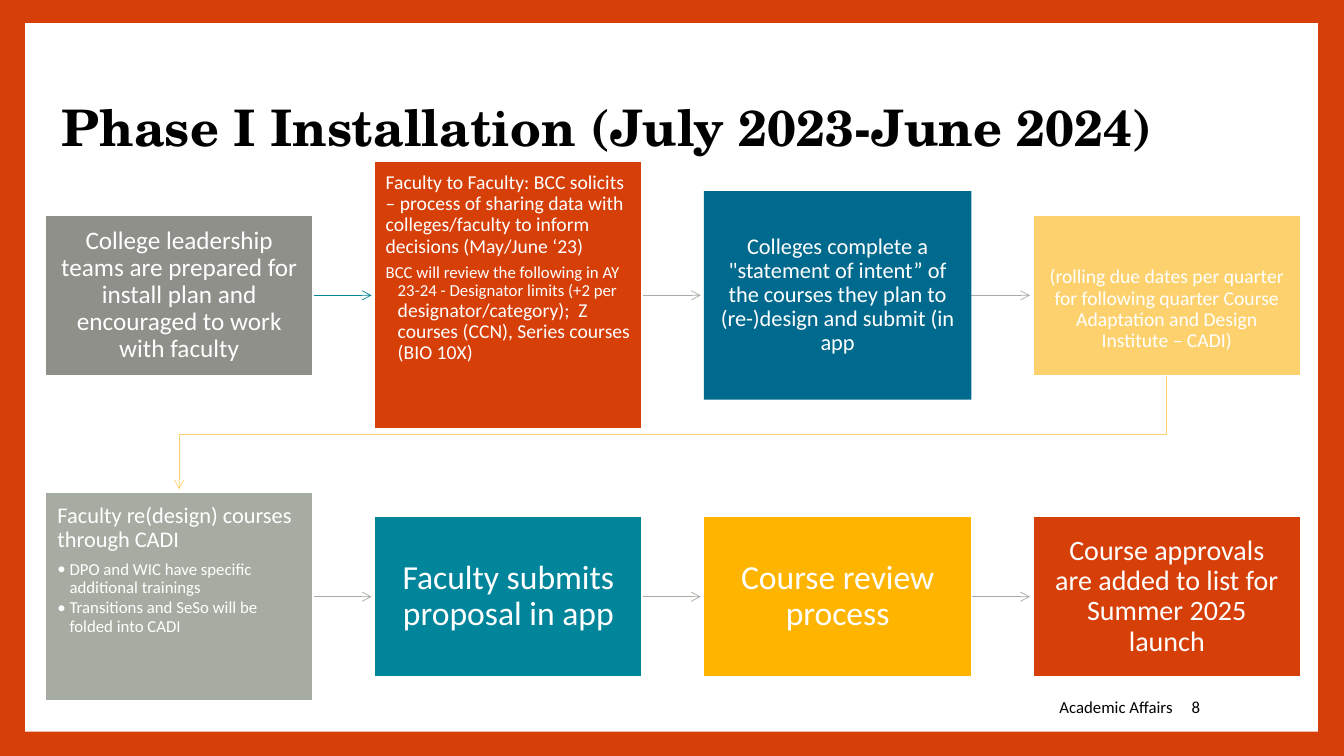
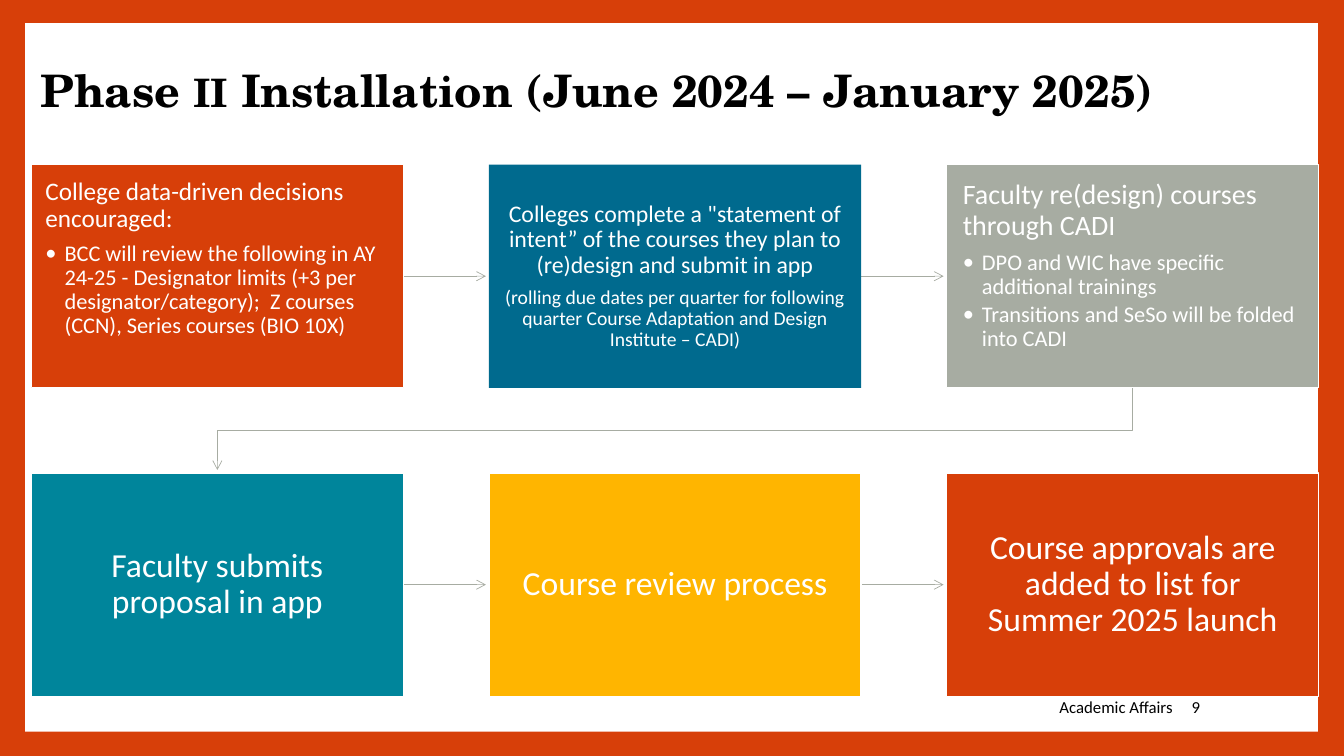
from lxml.etree import SubElement
from pptx import Presentation
from pptx.dml.color import RGBColor
from pptx.enum.shapes import MSO_CONNECTOR, MSO_SHAPE
from pptx.enum.text import MSO_ANCHOR, PP_ALIGN
from pptx.oxml.ns import qn
from pptx.util import Inches, Pt

WIDE, HIGH = 13.33, 7.5
GAP = 0.23
LOW = 0.6
MID = 0.78
TIP = 0.03

ORANGE = RGBColor(0xD7, 0x3F, 0x09)
WHITE = RGBColor(0xFF, 0xFF, 0xFF)
BLACK = RGBColor(0x00, 0x00, 0x00)
STONE = RGBColor(0x8E, 0x90, 0x89)
BLUE = RGBColor(0x00, 0x6A, 0x8E)
SAND = RGBColor(0xFD, 0xD2, 0x6E)
SAGE = RGBColor(0xA7, 0xAC, 0xA2)
TEAL = RGBColor(0x00, 0x85, 0x9B)
GOLD = RGBColor(0xFF, 0xB5, 0x00)

HEAD = {"name": "TeX Gyre Schola", "bold": True}
BODY = {"name": "Calibri", "bold": False}
ALIGN = {"center": PP_ALIGN.CENTER, "right": PP_ALIGN.RIGHT}
SIDES = ("margin_left", "margin_top", "margin_right", "margin_bottom")

DUE = ("(rolling due dates per quarter for following quarter "
       "Course Adaptation and Design Institute – CADI)")
REMAKE = "Faculty re(design) courses through CADI"
TRAIN = "DPO and WIC have specific additional trainings"
FOLD = "Transitions and SeSo will be folded into CADI"
SUBMIT = "Faculty submits proposal in app"
REVIEW = "Course review process"
LAUNCH = "Course approvals are added to list for Summer 2025 launch"

DECKS = [
    {
        "title": [("Phase I Installation (July 2023-June 2024)", 36)],
        "spot": (0.51, 0.57, 12.16, 1.45),
        "page": "8", "left": 0.45, "right": 12.9, "mids": (2.93, 5.92),
        "hang": 0.12, "lines": {0: TEAL, 3: SAND},
        "boxes": [
            (STONE, LOW, 0.14, 0, [("center", [
                ("College leadership teams are prepared for install plan "
                 "and encouraged to work with faculty", 18)])]),
            (ORANGE, 1, 0.11, 0, [
                ("left", [("Faculty to Faculty: BCC solicits – process of sharing data "
                           "with colleges/faculty to inform decisions (May/June ‘23)", 14)]),
                ("hang", [("BCC will review the following in AY 23-24 - "
                           "Designator limits (+2 per ", 12),
                          ("designator/category);  Z courses (CCN), "
                           "Series courses (BIO 10X)", 14)])]),
            (BLUE, MID, 0.12, 0, [("center", [
                ("Colleges complete a \"statement of intent” of the courses "
                 "they plan to (re-)design and submit (in app", 16)])]),
            (SAND, LOW, 0.11, 0.28, [("center", [(DUE, 14)])]),
            (SAGE, MID, 0.12, 0, [("left", [(REMAKE, 16)]),
                                  ("bullet", [(TRAIN, 12)]),
                                  ("bullet", [(FOLD, 12)])]),
            (TEAL, LOW, 0.19, 0, [("center", [(SUBMIT, 24)])]),
            (GOLD, LOW, 0.19, 0, [("center", [(REVIEW, 24)])]),
            (ORANGE, LOW, 0.16, 0, [("center", [(LAUNCH, 20)])]),
        ],
    },
    {
        "title": [("Phase ", 32), ("II", 28),
                  (" Installation (June 2024 – January 2025)", 32)],
        "spot": (0.3, 0.18, 12.16, 1.49),
        "page": "9", "left": 0.31, "right": 13.08, "mids": (2.74, 5.8),
        "hang": 0.19, "lines": {},
        "boxes": [
            (ORANGE, LOW, 0.14, 0, [
                ("left", [("College data-driven decisions encouraged:", 18)]),
                ("bullet", [("BCC will review the following in AY 24-25 - "
                             "Designator limits (+3 per designator/category);  "
                             "Z courses (CCN), Series courses (BIO 10X)", 16)])]),
            (BLUE, LOW, 0.13, 0, [
                ("center", [("Colleges complete a \"statement of intent” of the courses "
                             "they plan to (re)design and submit in app", 17)]),
                ("center", [(DUE, 14)])]),
            (SAGE, LOW, 0.16, 0, [("left", [(REMAKE, 20)]),
                                  ("bullet", [(TRAIN, 16)]),
                                  ("bullet", [(FOLD, 16)])]),
            (TEAL, LOW, 0.19, 0, [("center", [(SUBMIT, 24)])]),
            (GOLD, LOW, 0.19, 0, [("center", [(REVIEW, 24)])]),
            (ORANGE, LOW, 0.19, 0, [("center", [(LAUNCH, 24)])]),
        ],
    },
]


def put(item, look):
    for name, value in look.items():
        setattr(item, name, value)


def write(frame, paras, face, color, hang=0, space=0.9):
    frame.word_wrap = True
    for i, (kind, runs) in enumerate(paras):
        para = frame.paragraphs[0] if i == 0 else frame.add_paragraph()
        inner = kind in ("hang", "bullet")
        share = 0.15 if inner else 0.35
        put(para, {"alignment": ALIGN.get(kind, PP_ALIGN.LEFT),
                   "line_spacing": space,
                   "space_after": Pt(runs[0][1] * share) if face is BODY else Pt(0)})
        for text, size in runs:
            run = para.add_run()
            run.text = text
            put(run.font, {**face, "size": Pt(size)})
            run.font.color.rgb = color
        if inner:
            para.level = 1
            props = para._p.get_or_add_pPr()
            props.set("marL", str(Inches(hang)))
            props.set("indent", str(-Inches(hang)))
            if kind == "bullet":
                SubElement(props, qn("a:buFont")).set("typeface", BODY["name"])
                SubElement(props, qn("a:buChar")).set("char", "•")


deck = Presentation()
put(deck, {"slide_width": Inches(WIDE), "slide_height": Inches(HIGH)})
back = deck.slide_master.background.fill
back.solid()
back.fore_color.rgb = ORANGE

for plan in DECKS:
    slide = deck.slides.add_slide(deck.slide_layouts[6])
    shapes = slide.shapes
    panel = shapes.add_shape(MSO_SHAPE.RECTANGLE, *map(Inches, (0.25, 0.23, 12.82, 7.03)))
    panel.shadow.inherit = False
    panel.fill.solid()
    panel.fill.fore_color.rgb = WHITE
    panel.line.fill.background()

    labels = [
        (plan["spot"], "left", plan["title"], HEAD, 0.9),
        ((4.42, 6.81, 7.31, 0.4), "right", [("Academic Affairs", 12)], BODY, 1.0),
        ((11.72, 6.81, 0.69, 0.4), "left", [(plan["page"], 12)], BODY, 1.0),
    ]
    for spot, kind, runs, face, space in labels:
        frame = shapes.add_textbox(*map(Inches, spot)).text_frame
        frame.vertical_anchor = MSO_ANCHOR.MIDDLE
        write(frame, [(kind, runs)], face, BLACK, space=space)
        frame.paragraphs[0].space_after = Pt(0)

    boxes, mids = plan["boxes"], plan["mids"]
    cols = len(boxes) // 2
    width = (plan["right"] - plan["left"]) / (cols + GAP * (cols - 1))
    step = width * (1 + GAP)

    for i, (fill, ratio, inset, drop, paras) in enumerate(boxes):
        row, col = divmod(i, cols)
        x, y, tall = plan["left"] + col * step, mids[row], ratio * width
        if i < len(boxes) - 1:
            if col < cols - 1:
                arrow = shapes.add_connector(
                    MSO_CONNECTOR.STRAIGHT, Inches(x + width), Inches(y),
                    Inches(x + step - TIP), Inches(y))
            else:
                start, end = x + width / 2, plan["left"] + width / 2
                foot = y + tall / 2
                roof = mids[1] - boxes[cols][1] * width / 2
                turn = (foot + roof) / 2
                route = shapes.build_freeform(Inches(start), Inches(foot))
                route.add_line_segments(
                    [(Inches(a), Inches(b)) for a, b in
                     ((start, turn), (end, turn), (end, roof - TIP))], close=False)
                arrow = route.convert_to_shape()
                arrow.fill.background()
            arrow.line.color.rgb = plan["lines"].get(i, SAGE)
            arrow.line.width = Pt(0.5)
            SubElement(arrow.line._get_or_add_ln(), qn("a:tailEnd")).set("type", "arrow")
            SubElement(arrow._element.spPr, qn("a:effectLst"))

        box = shapes.add_shape(MSO_SHAPE.RECTANGLE, Inches(x), Inches(y - tall / 2),
                               Inches(width), Inches(tall))
        box.shadow.inherit = False
        box.fill.solid()
        box.fill.fore_color.rgb = fill
        if fill == BLUE:
            box.line.fill.background()
        else:
            box.line.color.rgb = WHITE
            box.line.width = Pt(1)
        frame = box.text_frame
        put(frame, {side: Inches(inset) for side in SIDES})
        frame.margin_top = Inches(inset + drop)
        middle = paras[0][0] == "center"
        frame.vertical_anchor = MSO_ANCHOR.MIDDLE if middle else MSO_ANCHOR.TOP
        write(frame, paras, BODY, WHITE, plan["hang"])

deck.save("out.pptx")
